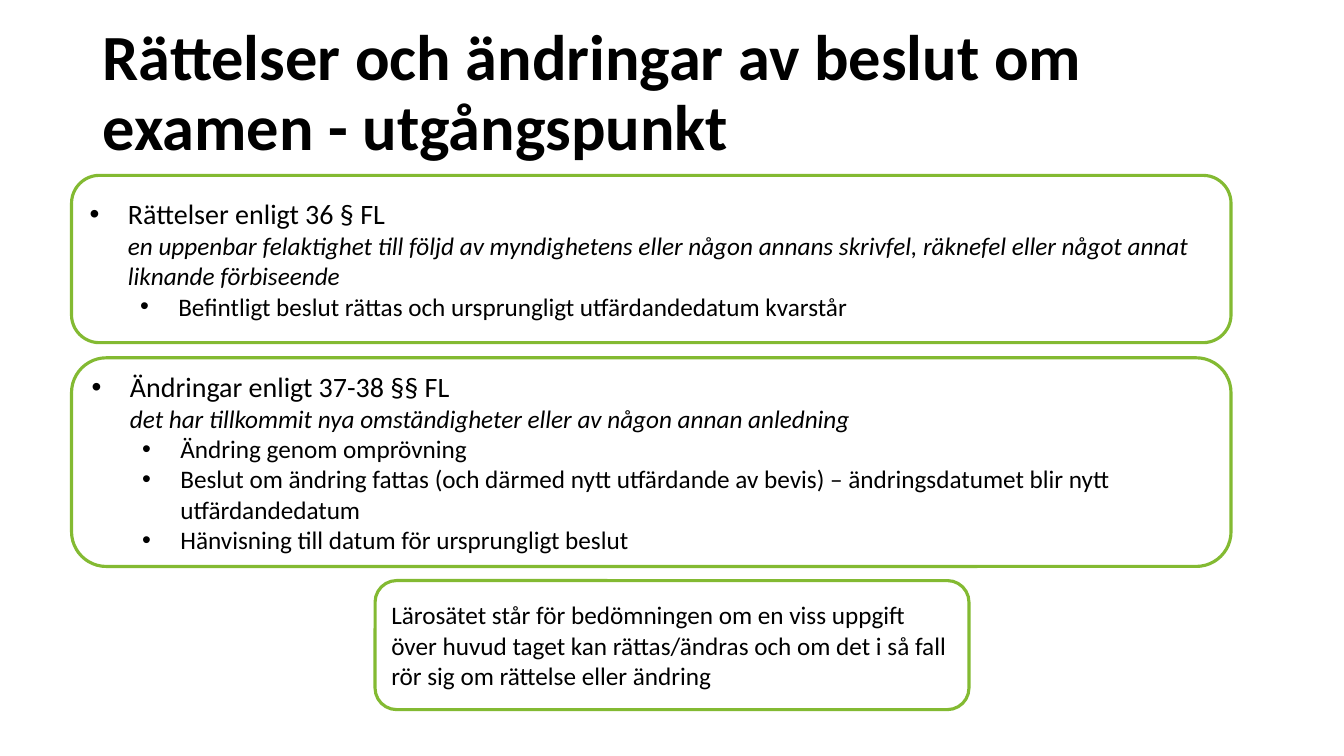
from lxml.etree import SubElement
from pptx import Presentation
from pptx.dml.color import RGBColor
from pptx.enum.shapes import MSO_SHAPE as Shape
from pptx.enum.text import MSO_ANCHOR as Anchor, PP_ALIGN as Align
from pptx.oxml.ns import qn
from pptx.util import Inches, Pt


def color(value):
    return RGBColor.from_string(value)


def add_bullet(paragraph, left):
    properties = paragraph._p.get_or_add_pPr()
    properties.set("marL", str(Inches(left)))
    properties.set("indent", str(-Inches(0.38)))
    SubElement(properties, qn("a:buFont"), typeface="Arial")
    SubElement(properties, qn("a:buChar"), char="•")


def write(paragraph, text, size=18, bold=False, italic=False, ink="000000"):
    run = paragraph.add_run()
    run.text = text
    font = run.font
    font.name, font.size = "Calibri", Pt(size)
    font.bold, font.italic = bold, italic
    font.color.rgb = color(ink)


class SlideBuilder:
    green = "83BA32"
    white = "FFFFFF"

    def __init__(self, slide):
        self.slide = slide

    def title(self, text, left, top, width, height):
        box = self.slide.shapes.add_textbox(*map(Inches, (left, top, width, height)))
        frame = box.text_frame
        frame.word_wrap = True
        frame.vertical_anchor = Anchor.MIDDLE
        paragraph = frame.paragraphs[0]
        paragraph.line_spacing = 0.9
        write(paragraph, text, size=46, bold=True)

    def panel(self, left, top, width, height):
        shape = self.slide.shapes.add_shape(
            Shape.ROUNDED_RECTANGLE, *map(Inches, (left, top, width, height)))
        shape.shadow.inherit = False
        shape.fill.solid()
        shape.fill.fore_color.rgb = color(self.white)
        shape.line.color.rgb = color(self.green)
        shape.line.width = Pt(2.25)
        frame = shape.text_frame
        frame.word_wrap = True
        frame.vertical_anchor = Anchor.MIDDLE
        frame.paragraphs[0].alignment = Align.LEFT
        return frame

    def rule_panel(self, top, height, heading, quote, points):
        frame = self.panel(0.71, top, 11.5, height)
        paragraph = frame.paragraphs[0]
        add_bullet(paragraph, 0.38)
        write(paragraph, heading, size=20)
        paragraph.add_line_break()
        write(paragraph, quote, italic=True)
        for point in points:
            paragraph = frame.add_paragraph()
            paragraph.alignment = Align.LEFT
            paragraph.level = 1
            add_bullet(paragraph, 0.88)
            write(paragraph, point)


def main():
    presentation = Presentation()
    presentation.slide_width = Inches(13.33)
    presentation.slide_height = Inches(7.5)
    builder = SlideBuilder(presentation.slides.add_slide(presentation.slide_layouts[6]))

    # Title
    builder.title("Rättelser och ändringar av beslut om examen - utgångspunkt",
                  0.92, 0.54, 11.5, 0.8)

    # Closing remark
    remark = builder.panel(3.72, 5.76, 5.89, 1.28)
    write(remark.paragraphs[0],
          "Lärosätet står för bedömningen om en viss uppgift över huvud taget kan "
          "rättas/ändras och om det i så fall rör sig om rättelse eller ändring")

    # Corrections and changes
    builder.rule_panel(
        1.74, 1.66, "Rättelser enligt 36 § FL",
        "en uppenbar felaktighet till följd av myndighetens eller någon annans "
        "skrivfel, räknefel eller något annat liknande förbiseende",
        ["Befintligt beslut rättas och ursprungligt utfärdandedatum kvarstår"])
    builder.rule_panel(
        3.55, 2.07, "Ändringar enligt 37-38 §§ FL",
        "det har tillkommit nya omständigheter eller av någon annan anledning",
        ["Ändring genom omprövning",
         "Beslut om ändring fattas (och därmed nytt utfärdande av bevis) – "
         "ändringsdatumet blir nytt utfärdandedatum",
         "Hänvisning till datum för ursprungligt beslut"])

    presentation.save("out.pptx")


if __name__ == "__main__":
    main()
